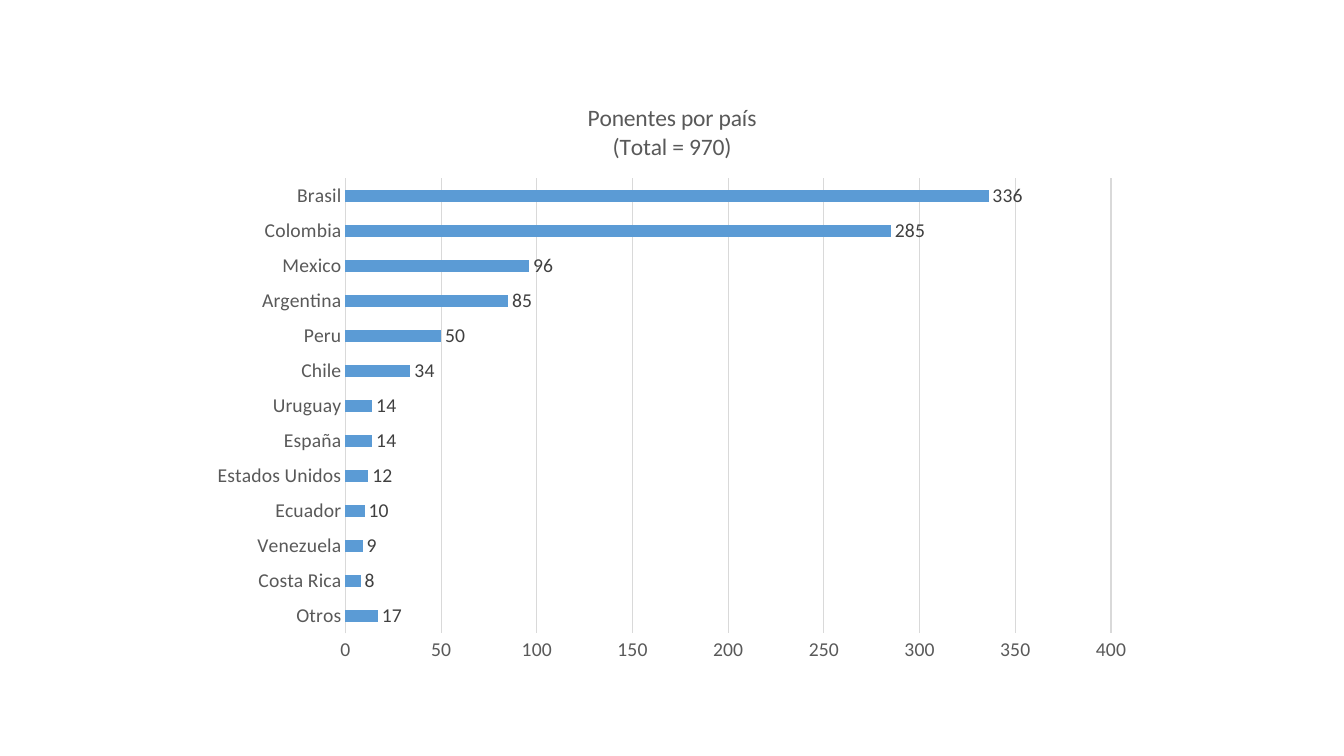
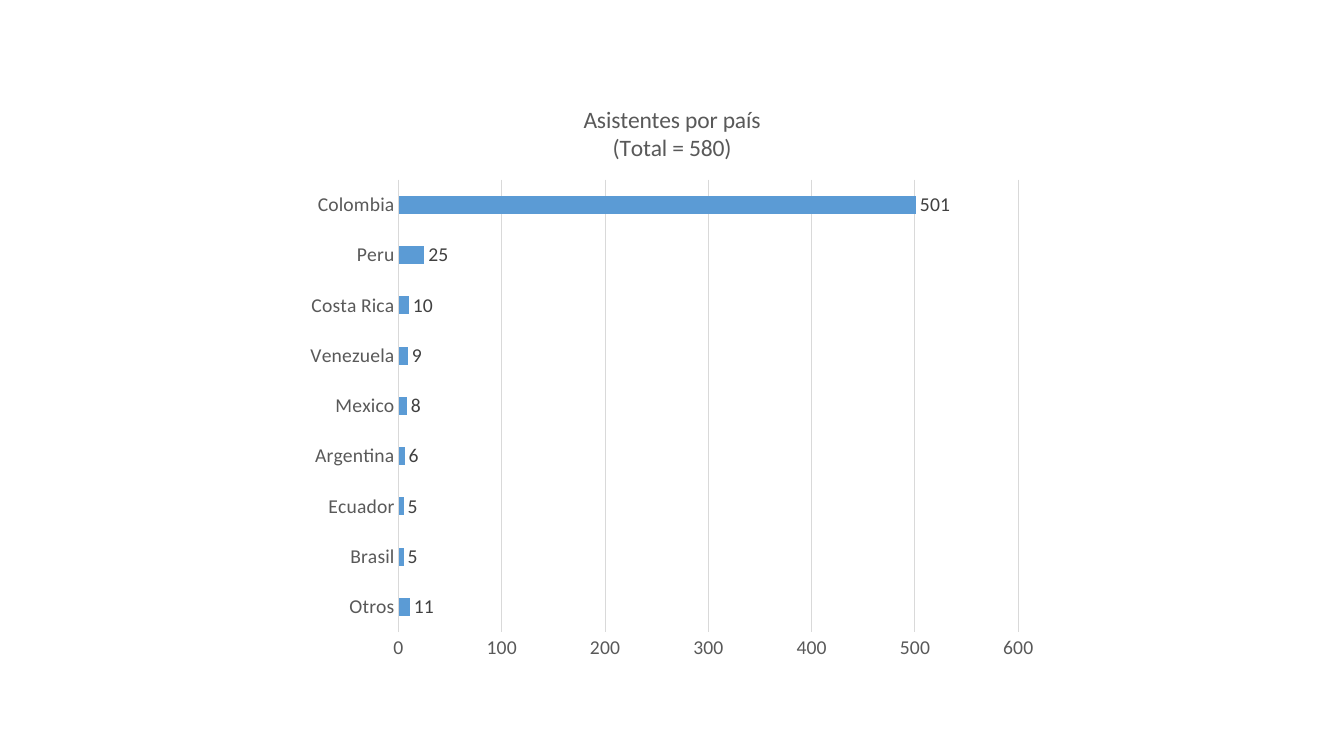
import pptx
import pptx.util
import pptx.chart.data
import pptx.dml.color
import pptx.enum.chart

Pt = pptx.util.Pt
RGB = pptx.dml.color.RGBColor
Kind = pptx.enum.chart

BLUE = RGB(0x5B, 0x9B, 0xD5)
GREY = RGB(0x59, 0x59, 0x59)
DARK = RGB(0x40, 0x40, 0x40)
PALE = RGB(0xD9, 0xD9, 0xD9)
BLACK = RGB(0, 0, 0)
FACE = "Calibri"

SPEAKERS = {
    "Brasil": 336, "Colombia": 285, "Mexico": 96, "Argentina": 85,
    "Peru": 50, "Chile": 34, "Uruguay": 14, "España": 14,
    "Estados Unidos": 12, "Ecuador": 10, "Venezuela": 9,
    "Costa Rica": 8, "Otros": 17,
}
GUESTS = {
    "Colombia": 501, "Peru": 25, "Costa Rica": 10, "Venezuela": 9,
    "Mexico": 8, "Argentina": 6, "Ecuador": 5, "Brasil": 5, "Otros": 11,
}


def style(font, color, size=14):
    font.name = FACE
    font.size = Pt(size)
    font.bold = False
    font.color.rgb = color


def rule(line):
    line.color.rgb = PALE
    line.width = Pt(0.75)


def set_title(chart, lines):
    chart.has_title = True
    chart.chart_title.include_in_layout = False
    frame = chart.chart_title.text_frame
    frame.text = "\n".join(lines)
    for para in frame.paragraphs:
        style(para.font, GREY, 16.8)
        for run in para.runs:
            style(run.font, GREY, 16.8)


def set_axes(chart, top, step):
    names, scale = chart.category_axis, chart.value_axis
    for axis in (names, scale):
        axis.major_tick_mark = Kind.XL_TICK_MARK.NONE
        axis.minor_tick_mark = Kind.XL_TICK_MARK.NONE
        style(axis.tick_labels.font, GREY)
    names.has_major_gridlines = False
    rule(names.format.line)
    scale.minimum_scale = 0
    scale.maximum_scale = top
    scale.major_unit = step
    scale.has_major_gridlines = True
    rule(scale.major_gridlines.format.line)
    scale.format.line.fill.background()


def set_bars(plot):
    plot.gap_width = 182
    plot.vary_by_categories = False
    fill = plot.series[0].format.fill
    fill.solid()
    fill.fore_color.rgb = BLUE
    plot.has_data_labels = True
    labels = plot.data_labels
    labels.show_value = True
    labels.position = Kind.XL_LABEL_POSITION.OUTSIDE_END
    style(labels.font, DARK)


def add_bars(deck, box, lines, counts, top, step):
    slide = deck.slides.add_slide(deck.slide_layouts[6])
    data = pptx.chart.data.CategoryChartData()
    data.categories = list(counts)[::-1]
    data.add_series(lines[0], list(counts.values())[::-1])
    chart = slide.shapes.add_chart(
        Kind.XL_CHART_TYPE.BAR_CLUSTERED, *map(Pt, box), data).chart
    style(chart.font, BLACK)
    chart.has_legend = False
    set_title(chart, lines)
    set_axes(chart, top, step)
    set_bars(chart.plots[0])


def main():
    deck = pptx.Presentation()
    deck.slide_width = Pt(960)
    deck.slide_height = Pt(540)
    add_bars(deck, (142, 59, 676, 422),
             ("Ponentes por país", "(Total = 970)"), SPEAKERS, 400, 50)
    add_bars(deck, (211, 60, 538, 420),
             ("Asistentes por país", "(Total = 580)"), GUESTS, 600, 100)
    deck.save("out.pptx")


if __name__ == "__main__":
    main()
